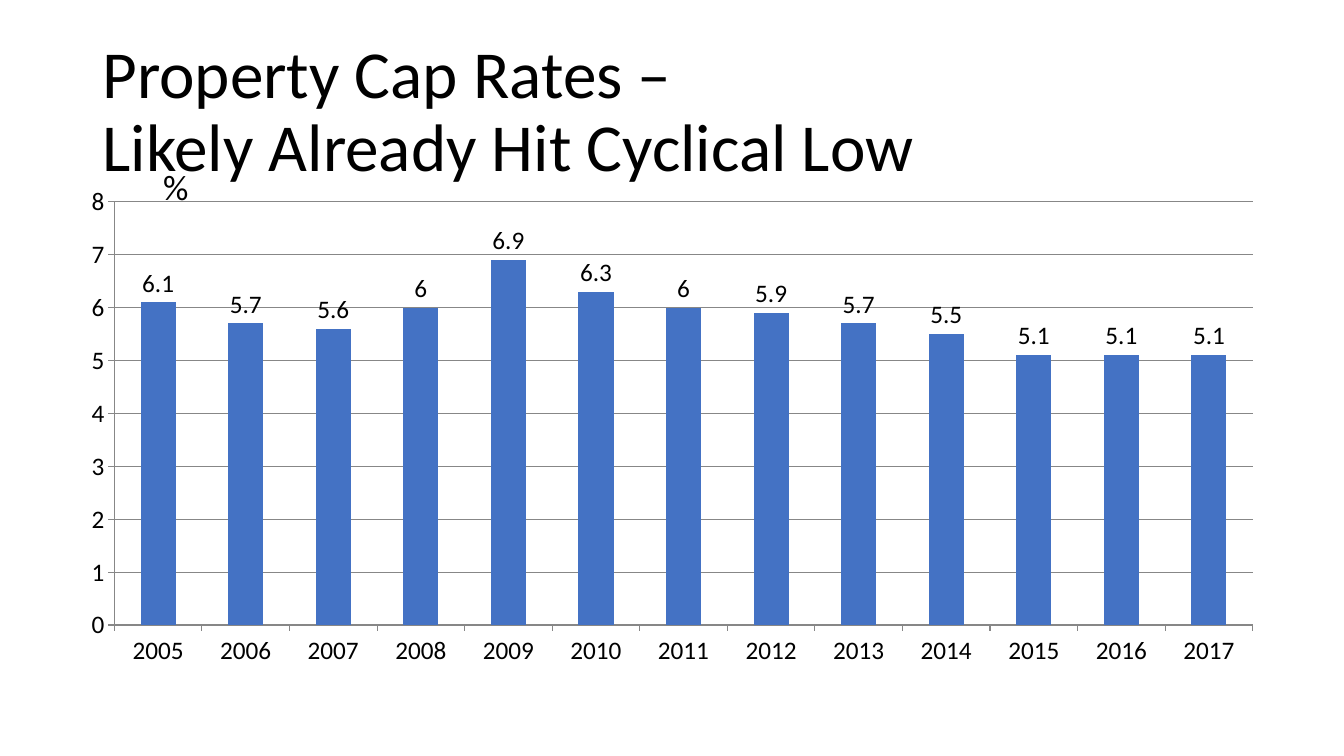
from pptx import Presentation
from pptx import util as u
from pptx.chart.data import CategoryChartData
from pptx.dml.color import RGBColor
from pptx.enum import chart as c
from pptx.enum import text as t

FONT = "Calibri"


def style_font(font, size, color="000000"):
    font.name = FONT
    font.size = u.Pt(size)
    font.bold = False
    font.color.rgb = RGBColor.from_string(color)


presentation = Presentation()
presentation.slide_width = u.Cm(33.87)
presentation.slide_height = u.Cm(19.05)
slide = presentation.slides.add_slide(presentation.slide_layouts[5])

# Title
title = slide.shapes.title
title.left, title.top = u.Cm(2.33), u.Cm(1.01)
title.width, title.height = u.Cm(29.21), u.Cm(3.68)
title.text_frame.text = "Property Cap Rates – \vLikely Already Hit Cyclical Low"
title.text_frame.auto_size = t.MSO_AUTO_SIZE.NONE
title.text_frame.vertical_anchor = t.MSO_ANCHOR.MIDDLE
paragraph = title.text_frame.paragraphs[0]
paragraph.alignment = t.PP_ALIGN.LEFT
paragraph.line_spacing = 0.9
for run in paragraph.runs:
    style_font(run.font, 48)

# Cap rates by year
cap_rates = [6.1, 5.7, 5.6, 6, 6.9, 6.3, 6, 5.9, 5.7, 5.5, 5.1, 5.1, 5.1]
chart_data = CategoryChartData()
chart_data.categories = [str(2005 + i) for i in range(len(cap_rates))]
chart_data.add_series("Series 1", cap_rates)
chart = slide.shapes.add_chart(
    c.XL_CHART_TYPE.COLUMN_CLUSTERED,
    u.Cm(1.7), u.Cm(4.45), u.Cm(30.48), u.Cm(12.57), chart_data,
).chart
chart.has_title = False
chart.has_legend = False
style_font(chart.font, 18)

plot = chart.plots[0]
plot.gap_width = 150
plot.vary_by_categories = False
plot.has_data_labels = True
labels = plot.data_labels
labels.show_value = True
labels.position = c.XL_LABEL_POSITION.OUTSIDE_END
style_font(labels.font, 18)
bar_fill = plot.series[0].format.fill
bar_fill.solid()
bar_fill.fore_color.rgb = RGBColor.from_string("4472C4")

value_axis = chart.value_axis
value_axis.minimum_scale = 0
value_axis.maximum_scale = 8
value_axis.major_unit = 1
value_axis.has_major_gridlines = True
for axis in (chart.category_axis, value_axis):
    axis.major_tick_mark = c.XL_TICK_MARK.OUTSIDE
    axis.minor_tick_mark = c.XL_TICK_MARK.NONE
for ruled in (chart.category_axis, value_axis, value_axis.major_gridlines):
    ruled.format.line.width = u.Pt(0.75)
    ruled.format.line.color.rgb = RGBColor.from_string("878787")

# Unit of the value axis
unit_label = slide.shapes.add_textbox(u.Cm(3.86), u.Cm(4.04), u.Cm(1.17), u.Cm(1.35))
unit_label.text_frame.text = "%"
unit_label.text_frame.word_wrap = False
unit_label.text_frame.auto_size = t.MSO_AUTO_SIZE.SHAPE_TO_FIT_TEXT
style_font(unit_label.text_frame.paragraphs[0].runs[0].font, 25.3)

presentation.save("out.pptx")
